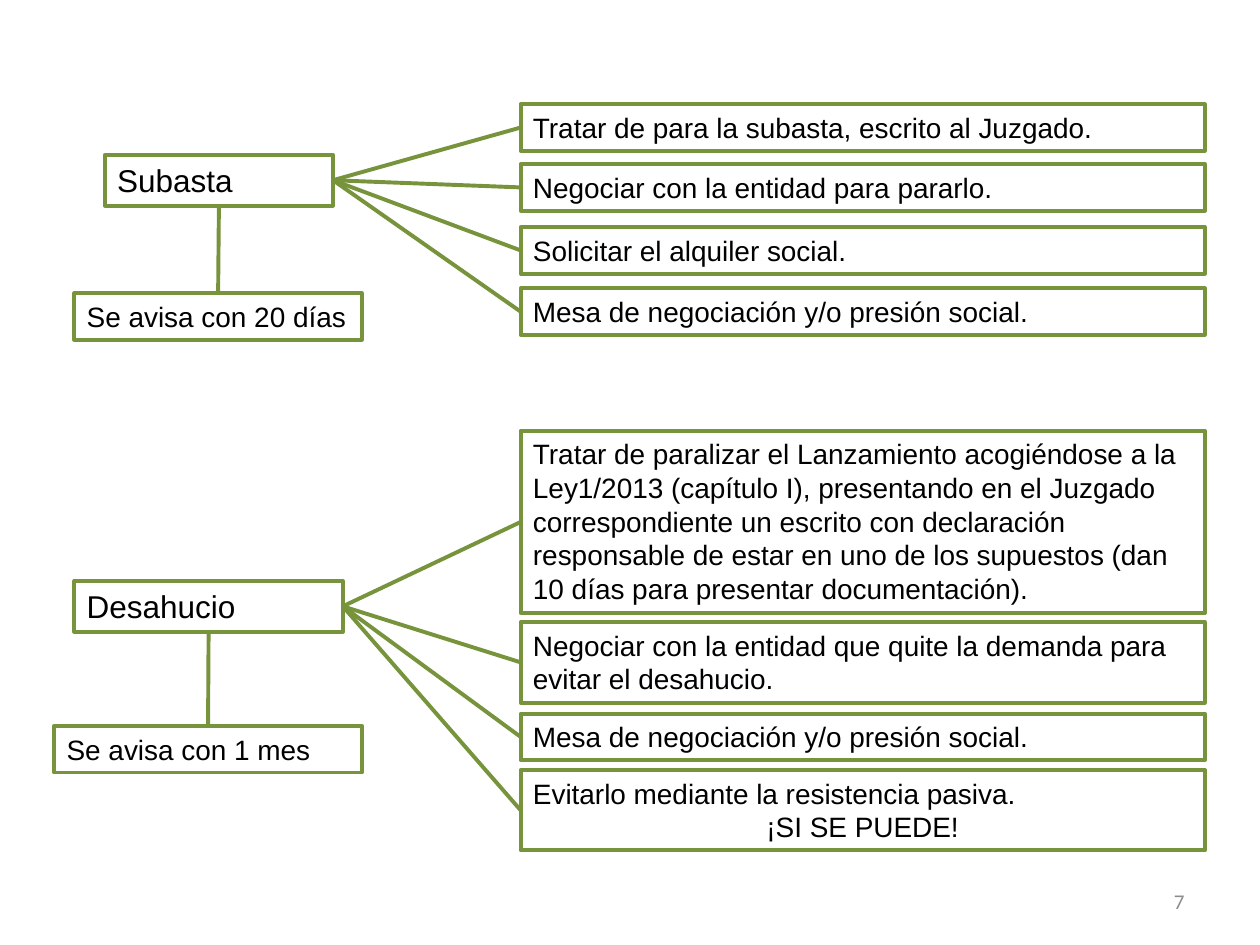
from lxml.etree import SubElement
from pptx import Presentation
from pptx.dml.color import RGBColor
from pptx.enum.shapes import MSO_CONNECTOR, MSO_SHAPE
from pptx.enum.text import MSO_ANCHOR, MSO_AUTO_SIZE, PP_ALIGN
from pptx.oxml.ns import qn
from pptx.util import Pt

GREEN, BLACK, GRAY = "77933C", "000000", "8C8C8C"
BODY = {"name": "Arial", "size": Pt(16)}
TOPIC = {"name": "Arial", "size": Pt(18)}
NUMBER = {"name": "Calibri", "size": Pt(12)}
LEFT, CENTER, RIGHT = PP_ALIGN.LEFT, PP_ALIGN.CENTER, PP_ALIGN.RIGHT
TOP_SITE, LEFT_SITE, BOTTOM_SITE, RIGHT_SITE = range(4)
ACTION_LEFT, ACTION_WIDTH = 297.5, 391
LINE_HEIGHT, PADDING, TOPIC_HEIGHT = 19.4, 7.2, 29

STAGES = [
    {
        "topic": ("Subasta", 59.9, 88.5, 130.4),
        "notice": ("Se avisa con 20 días", 42.5, 167.6, 164.3),
        "actions": [
            (59.6, 1, ["Tratar de para la subasta, escrito al Juzgado."]),
            (93.8, 1, ["Negociar con la entidad para pararlo."]),
            (129.8, 1, ["Solicitar el alquiler social."]),
            (164.8, 1, ["Mesa de negociación y/o presión social."]),
        ],
    },
    {
        "topic": ("Desahucio", 42.5, 332, 153.4),
        "notice": ("Se avisa con 1 mes", 31, 414.9, 175.8),
        "actions": [
            (246.2, 5, ["Tratar de paralizar el Lanzamiento acogiéndose a la "
                        "Ley1/2013 (capítulo I), presentando en el Juzgado "
                        "correspondiente un escrito con declaración responsable "
                        "de estar en uno de los supuestos (dan 10 días para "
                        "presentar documentación)."]),
            (355.5, 2, ["Negociar con la entidad que quite la demanda para "
                        "evitar el desahucio."]),
            (407.8, 1, ["Mesa de negociación y/o presión social."]),
            (440, 2, ["Evitarlo mediante la resistencia pasiva.", "¡SI SE PUEDE!"]),
        ],
    },
]


def color(value):
    """Turn a hex string into a colour."""
    return RGBColor.from_string(value)


def write(frame, texts, font, ink, alignments, anchor):
    """Fill a text frame with one paragraph per text."""
    frame.word_wrap = True
    frame.vertical_anchor = anchor
    for index, (text, alignment) in enumerate(zip(texts, alignments)):
        para = frame.add_paragraph() if index else frame.paragraphs[0]
        para.alignment = alignment
        span = para.add_run()
        span.text = text
        span.font.color.rgb = color(ink)
        for name, value in font.items():
            setattr(span.font, name, value)


def outline(item):
    """Give a box or connector the green line."""
    item.line.color.rgb = color(GREEN)
    item.line.width = Pt(2.25)


def add_box(page, texts, left, top, width, height, font):
    """Add an outlined box with text."""
    bounds = [Pt(value) for value in (left, top, width, height)]
    box = page.shapes.add_shape(MSO_SHAPE.RECTANGLE, *bounds)
    box.shadow.inherit = False
    box.fill.background()
    outline(box)
    write(box.text_frame, texts, font, BLACK, (LEFT, CENTER), MSO_ANCHOR.TOP)
    box.text_frame.auto_size = MSO_AUTO_SIZE.SHAPE_TO_FIT_TEXT
    return box


def join(page, start, start_site, end, end_site):
    """Connect two boxes with a straight line."""
    link = page.shapes.add_connector(MSO_CONNECTOR.STRAIGHT, 0, 0, 0, 0)
    link.begin_connect(start, start_site)
    link.end_connect(end, end_site)
    outline(link)
    SubElement(link._element.spPr, qn("a:effectLst"))


def add_stage(page, stage):
    """Add a topic with its notice below and its actions to the right."""
    text, *place = stage["topic"]
    topic = add_box(page, [text], *place, TOPIC_HEIGHT, TOPIC)
    text, *place = stage["notice"]
    notice = add_box(page, [text], *place, LINE_HEIGHT + PADDING, BODY)
    join(page, topic, BOTTOM_SITE, notice, TOP_SITE)
    for top, lines, texts in stage["actions"]:
        height = lines * LINE_HEIGHT + PADDING
        action = add_box(page, texts, ACTION_LEFT, top, ACTION_WIDTH, height, BODY)
        join(page, topic, RIGHT_SITE, action, LEFT_SITE)


def main():
    """Build and save the slide."""
    deck = Presentation()
    deck.slide_width, deck.slide_height = Pt(720), Pt(540)
    page = deck.slides.add_slide(deck.slide_layouts[6])
    for stage in STAGES:
        add_stage(page, stage)
    number = page.shapes.add_textbox(Pt(516), Pt(500.5), Pt(168), Pt(28.75))
    write(number.text_frame, ["7"], NUMBER, GRAY, [RIGHT], MSO_ANCHOR.MIDDLE)
    deck.save("out.pptx")


if __name__ == "__main__":
    main()
